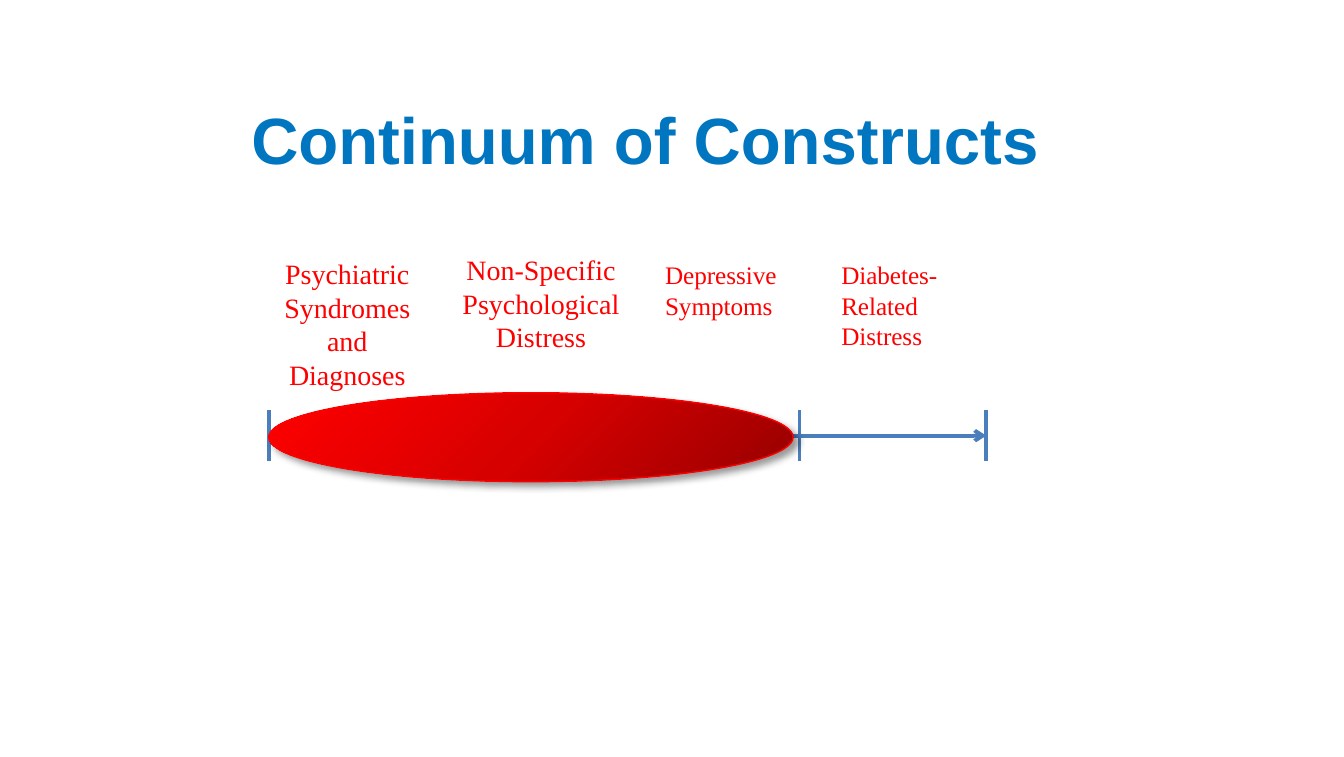
"""Build the Continuum of Constructs slide."""
from copy import deepcopy

from lxml.etree import SubElement
from pptx import Presentation
from pptx.dml.color import RGBColor
from pptx.enum.shapes import MSO_CONNECTOR, MSO_SHAPE
from pptx.enum.text import MSO_ANCHOR, PP_ALIGN
from pptx.oxml.ns import qn
from pptx.util import Cm, Pt

COLORS = {"title": "0076C0", "label": "FF0000", "axis": "4B7EBC", "shadow": "000000"}
GRADIENT = [(0, "970000"), (0.5, "D70000"), (1, "FF0000")]
TITLE = "Continuum of Constructs"
CONSTRUCTS = [
    ("Psychiatric Syndromes and Diagnoses", (5.08, 4.72, 2.97, 2.82), 15, PP_ALIGN.CENTER),
    ("Non-Specific Psychological Distress", (8.46, 4.65, 3.53, 2.18), 15, PP_ALIGN.CENTER),
    ("Depressive Symptoms", (12.32, 4.78, 3, 1.42), 13.5, PP_ALIGN.LEFT),
    ("Diabetes-Related Distress", (15.65, 4.78, 2.77, 1.98), 13.5, PP_ALIGN.LEFT),
]
TICKS = [5.08, 8.46, 11.99, 15.11, 18.64]
AXIS_Y, TICK_HALF = 8.23, 0.48
ELLIPSE = (5.08, 7.42, 9.91, 1.68)


def rgb(name):
    return RGBColor.from_string(COLORS[name])


def add_text(slide, text, box, size, font_name, color, align):
    frame = slide.shapes.add_textbox(*map(Cm, box)).text_frame
    frame.word_wrap = True
    paragraph = frame.paragraphs[0]
    paragraph.alignment = align
    run = paragraph.add_run()
    run.text = text
    run.font.size = Pt(size)
    run.font.name = font_name
    run.font.color.rgb = rgb(color)
    return frame, run


def add_axis_line(slide, *ends):
    line = slide.shapes.add_connector(MSO_CONNECTOR.STRAIGHT, *map(Cm, ends))
    line.line.color.rgb = rgb("axis")
    line.line.width = Pt(2)
    SubElement(line._element.spPr, qn("a:effectLst"))
    return line


def add_ellipse(slide):
    ellipse = slide.shapes.add_shape(MSO_SHAPE.OVAL, *map(Cm, ELLIPSE))
    ellipse.fill.gradient()
    ellipse.fill.gradient_angle = 135
    stops = ellipse._element.spPr.find(".//" + qn("a:gsLst"))
    stops.insert(1, deepcopy(stops[0]))
    for stop, (position, color) in zip(ellipse.fill.gradient_stops, GRADIENT):
        stop.position = position
        stop.color.rgb = RGBColor.from_string(color)
    ellipse.line.color.rgb = rgb("label")
    ellipse.line.width = Pt(0.75)
    ellipse.shadow.inherit = False
    effects = ellipse._element.spPr.find(qn("a:effectLst"))
    shadow = SubElement(effects, qn("a:outerShdw"), blurRad=str(Pt(4)),
                        dist=str(Pt(3)), dir=str(45 * 60000), rotWithShape="0")
    shade = SubElement(shadow, qn("a:srgbClr"), val=COLORS["shadow"])
    SubElement(shade, qn("a:alpha"), val="40000")


def main():
    deck = Presentation()
    deck.slide_width, deck.slide_height = Cm(25.4), Cm(14.3)
    slide = deck.slides.add_slide(deck.slide_layouts[6])

    heading, heading_run = add_text(slide, TITLE, (4.5, 1.42, 16.2, 2.39), 35,
                                    "Arial", "title", PP_ALIGN.LEFT)
    heading.vertical_anchor = MSO_ANCHOR.MIDDLE
    heading_run.font.bold = True

    axis = add_axis_line(slide, TICKS[0], AXIS_Y, TICKS[-1], AXIS_Y)
    SubElement(axis.line._get_or_add_ln(), qn("a:tailEnd"), type="arrow")
    for x in TICKS:
        add_axis_line(slide, x, AXIS_Y - TICK_HALF, x, AXIS_Y + TICK_HALF)

    for construct, box, size, align in CONSTRUCTS:
        add_text(slide, construct, box, size, "Times New Roman", "label", align)
    add_ellipse(slide)
    deck.save("out.pptx")


if __name__ == "__main__":
    main()
